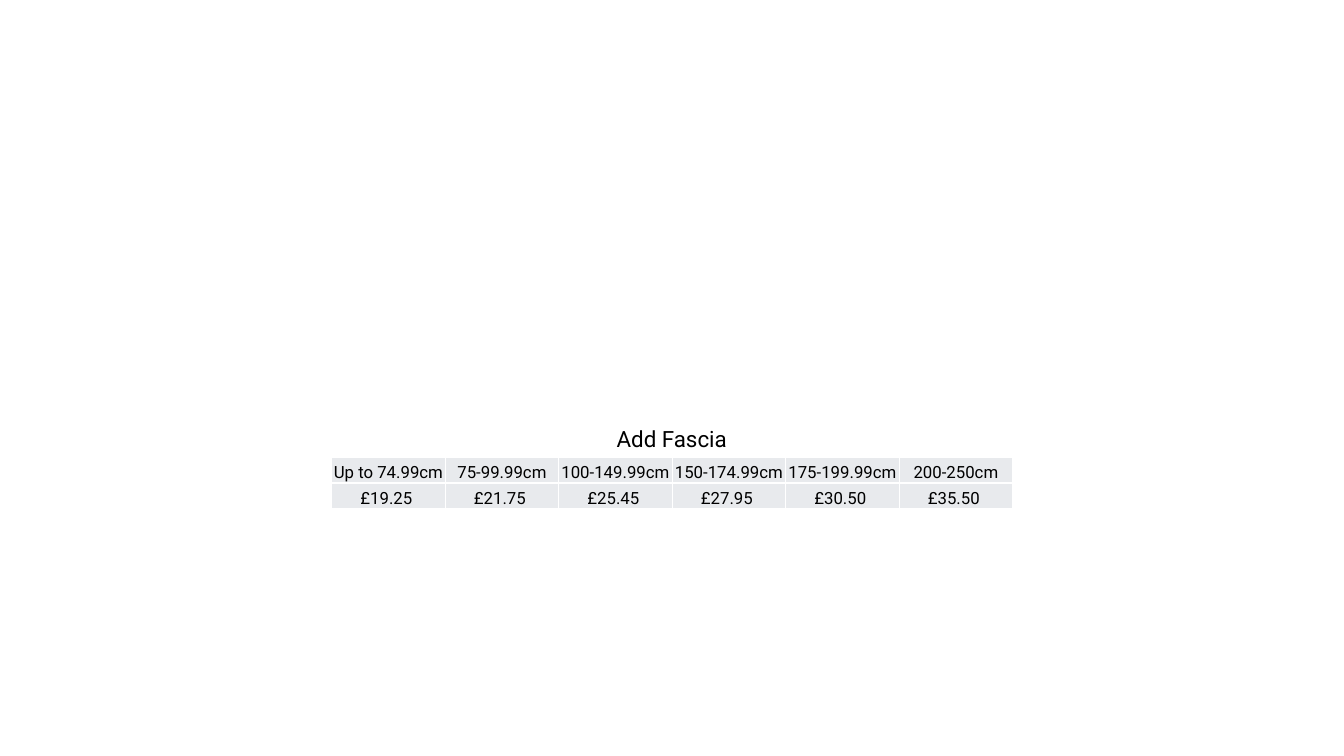
from lxml import etree
from pptx import Presentation
from pptx.dml.color import RGBColor
from pptx.enum import text
from pptx.oxml import ns
from pptx.util import Cm, Pt

FONT = "Roboto"
BLACK, WHITE, GREY = "000000", "FFFFFF", "E8EAED"
WIDTHS = ["Up to 74.99cm", "75-99.99cm", "100-149.99cm",
          "150-174.99cm", "175-199.99cm", "200-250cm"]
PRICES = ["£19.25 ", "£21.75 ", "£25.45 ", "£27.95 ", "£30.50 ", "£35.50 "]


def rgb(value):
    return RGBColor.from_string(value)


def write(tf, words, size=12, color=BLACK, align=text.PP_ALIGN.CENTER):
    p = tf.paragraphs[0]
    p.alignment = align
    r = p.add_run()
    r.text = words
    r.font.name = FONT
    r.font.size = Pt(size)
    r.font.color.rgb = rgb(color)


def add_borders(cell, color=WHITE, width=1):
    tc_pr = cell._tc.get_or_add_tcPr()
    for side in "LRTB":
        ln = etree.SubElement(tc_pr, ns.qn(f"a:ln{side}"), w=str(Pt(width)))
        fill = etree.SubElement(ln, ns.qn("a:solidFill"))
        etree.SubElement(fill, ns.qn("a:srgbClr"), val=color)


def format_title(sp, words, left, top, width, height):
    sp.left, sp.top, sp.width, sp.height = left, top, width, height
    tf = sp.text_frame
    tf.word_wrap = True
    tf.auto_size = text.MSO_AUTO_SIZE.SHAPE_TO_FIT_TEXT
    tf.vertical_anchor = text.MSO_ANCHOR.TOP
    write(tf, words, size=16)


def add_price_table(s, rows, left, top, col_width, row_height):
    cols = len(rows[0])
    table = s.shapes.add_table(len(rows), cols, left, top,
                               col_width * cols, row_height * len(rows)).table
    table.first_row = table.horz_banding = False
    for column in table.columns:
        column.width = col_width
    for i, row in enumerate(rows):
        table.rows[i].height = row_height
        for j, words in enumerate(row):
            cell = table.cell(i, j)
            cell.margin_left = cell.margin_right = cell.margin_top = Cm(0.03)
            cell.margin_bottom = 0
            cell.vertical_anchor = text.MSO_ANCHOR.BOTTOM
            add_borders(cell)
            cell.fill.solid()
            cell.fill.fore_color.rgb = rgb(GREY)
            write(cell.text_frame, words)


def main():
    prs = Presentation()
    prs.slide_width, prs.slide_height = Cm(33.87), Cm(19.05)
    s = prs.slides.add_slide(prs.slide_layouts[5])

    # Heading above the table
    format_title(s.shapes.title, "Add Fascia",
                 Cm(12.22), Cm(10.59), Cm(9.42), Cm(0.94))

    # Price for each width band
    add_price_table(s, [WIDTHS, PRICES],
                    Cm(8.36), Cm(11.53), Cm(2.86), Cm(0.64))

    prs.save("out.pptx")


if __name__ == "__main__":
    main()
